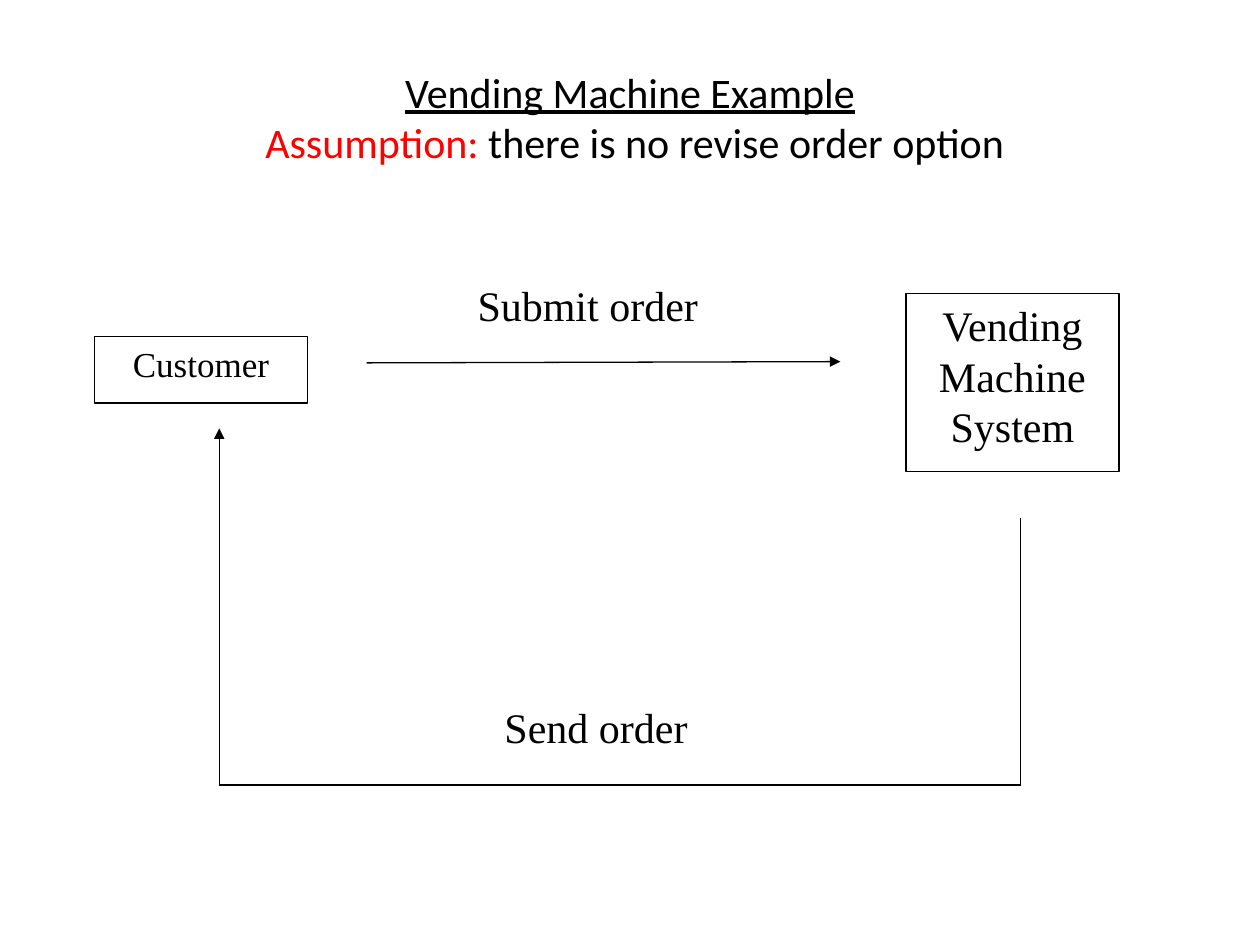
from lxml.etree import SubElement
from pptx import Presentation
from pptx.dml.color import RGBColor
from pptx.enum.shapes import MSO_CONNECTOR, MSO_SHAPE
from pptx.enum.text import MSO_ANCHOR, PP_ALIGN
from pptx.oxml.ns import qn
from pptx.util import Inches, Pt


def paint(color, code):
    color.rgb = RGBColor.from_string(code)


def style(para, name, size):
    para.alignment = PP_ALIGN.CENTER
    para.font.name = name
    para.font.size = Pt(size)
    paint(para.font.color, "000000")


deck = Presentation()
deck.slide_width = Inches(10)
deck.slide_height = Inches(7.5)
slide = deck.slides.add_slide(deck.slide_layouts[6])

title = slide.shapes.add_textbox(Inches(0.5), Inches(0.3), Inches(9), Inches(1.25))
frame = title.text_frame
frame.word_wrap = True
frame.vertical_anchor = MSO_ANCHOR.MIDDLE
para = frame.paragraphs[0]
style(para, "Calibri", 24)
head = para.add_run()
head.text = "Vending Machine Example"
head.font.underline = True
para.add_line_break()
for text, code in [
    (" Assumption:", "FF0000"),
    (" there is no revise order option", "000000"),
]:
    run = para.add_run()
    run.text = text
    paint(run.font.color, code)

boxes = [
    ("Customer", 0.75, 2.67, 1.69, 0.53, 20, "000000"),
    ("Vending Machine System", 7.19, 2.33, 1.69, 1.41, 24, "000000"),
    ("Send order", 3.82, 5.52, 1.82, 0.53, 24, "FFFFFF"),
    ("Submit order", 3.56, 2.17, 2.21, 0.53, 24, "FFFFFF"),
]
for text, left, top, width, height, size, edge in boxes:
    box = slide.shapes.add_shape(
        MSO_SHAPE.RECTANGLE, Inches(left), Inches(top), Inches(width), Inches(height)
    )
    box.shadow.inherit = False
    box.fill.solid()
    paint(box.fill.fore_color, "FFFFFF")
    paint(box.line.color, edge)
    box.line.width = Pt(0.75)
    frame = box.text_frame
    frame.word_wrap = True
    frame.vertical_anchor = MSO_ANCHOR.TOP
    frame.text = text
    style(frame.paragraphs[0], "Times New Roman", size)

lines = [
    (2.91, 2.88, 6.67, 2.87, True),
    (8.1, 4.11, 8.1, 6.23, False),
    (8.1, 6.23, 1.74, 6.23, False),
    (1.74, 6.23, 1.74, 3.4, True),
]
for *ends, arrow in lines:
    line = slide.shapes.add_connector(MSO_CONNECTOR.STRAIGHT, *map(Inches, ends))
    paint(line.line.color, "000000")
    line.line.width = Pt(0.75)
    props = line.element.spPr
    if arrow:
        SubElement(props.find(qn("a:ln")), qn("a:tailEnd"), type="triangle")
    SubElement(props, qn("a:effectLst"))

deck.save("out.pptx")
